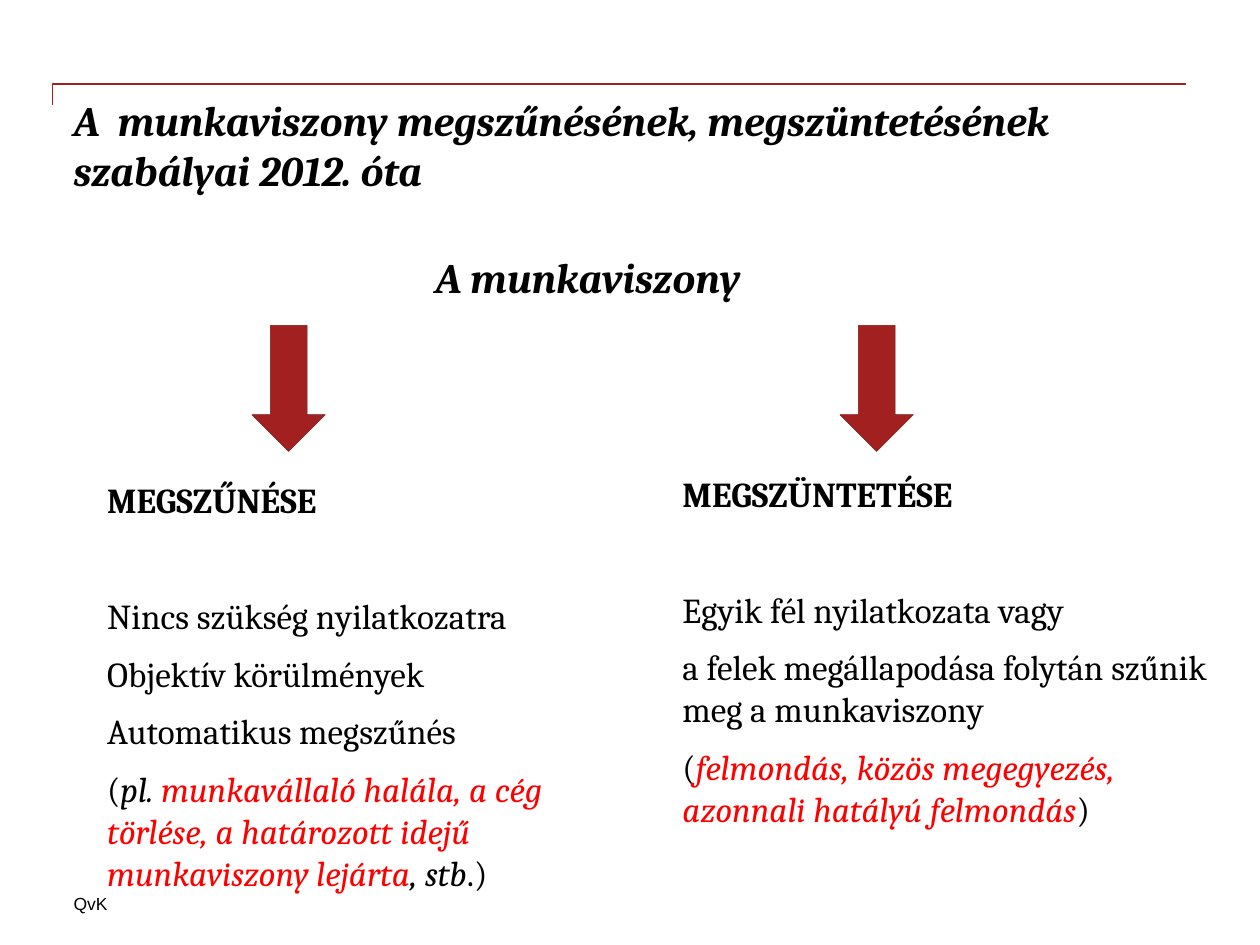
from dataclasses import dataclass

from pptx import Presentation
from pptx.dml.color import RGBColor
from pptx.enum.shapes import MSO_SHAPE as Shape
from pptx.enum.text import MSO_ANCHOR as Anchor, MSO_AUTO_SIZE as AutoSize, PP_ALIGN as Align
from pptx.oxml.ns import qn
from pptx.util import Inches, Pt

# Grid: 120 columns by 90 rows, one cell is a twelfth of an inch
COLUMNS, ROWS = 120, 90
CELL = Inches(10) // COLUMNS


@dataclass(frozen=True)
class Theme:
    accent: RGBColor = RGBColor(0xA3, 0x20, 0x20)
    outline: RGBColor = RGBColor(0x79, 0x18, 0x18)
    ink: RGBColor = RGBColor(0, 0, 0)
    example: RGBColor = RGBColor(0xFF, 0, 0)
    serif: str = "Cambria"
    sans: str = "Arial"
    title: int = 24
    body: int = 20
    footer: int = 10
    gap: int = 9
    head_gap: int = 42


@dataclass(frozen=True)
class Area:
    column: int
    row: int
    width: int
    height: int

    def emu(self) -> tuple:
        return tuple(n * CELL for n in (self.column, self.row, self.width, self.height))


@dataclass(frozen=True)
class Span:
    text: str
    bold: bool = False
    italic: bool = False
    color: RGBColor = Theme.ink


@dataclass(frozen=True)
class Branch:
    area: Area
    arrow: Area
    inset: tuple
    heading: str
    lines: tuple


THEME = Theme()

BRANCHES = (
    Branch(Area(9, 45, 52, 42), Area(24, 31, 7, 12), (0.1, 0.05), "MEGSZŰNÉSE", (
        (Span("Nincs szükség nyilatkozatra"),),
        (Span("Objektív körülmények"),),
        (Span("Automatikus megszűnés"),),
        (Span("("), Span("pl. ", italic=True),
         Span("munkavállaló halála, a cég törlése, a határozott idejű munkaviszony lejárta",
              italic=True, color=THEME.example),
         Span(", stb", italic=True), Span(".)")),
    )),
    Branch(Area(65, 45, 50, 30), Area(80, 31, 7, 12), (0, 0), "MEGSZÜNTETÉSE", (
        (Span("Egyik fél nyilatkozata vagy"),),
        (Span("a felek megállapodása folytán szűnik meg a munkaviszony"),),
        (Span("("), Span("felmondás, közös megegyezés, azonnali hatályú felmondás",
                         italic=True, color=THEME.example), Span(")")),
    )),
)


def place(box, area: Area) -> None:
    box.left, box.top, box.width, box.height = area.emu()


def write(box, paragraphs, *, size: int, font: str = THEME.serif, align=Align.LEFT,
          inset: tuple = (0, 0), gaps: tuple = (0,)) -> None:
    """Fill a box with paragraphs of spans; the last gap serves all later paragraphs."""
    frame = box.text_frame
    frame.word_wrap = True
    frame.auto_size = AutoSize.NONE
    frame.vertical_anchor = Anchor.TOP
    frame.margin_left = frame.margin_right = Inches(inset[0])
    frame.margin_top = frame.margin_bottom = Inches(inset[1])
    for index, spans in enumerate(paragraphs):
        para = frame.add_paragraph() if index else frame.paragraphs[0]
        para.alignment = align
        para.line_spacing = 1.0
        para.space_before = Pt(0)
        para.space_after = Pt(gaps[min(index, len(gaps) - 1)])
        properties = para._p.get_or_add_pPr()
        properties.set("marL", "0")
        properties.set("indent", "0")
        properties.append(properties.makeelement(qn("a:buNone"), {}))
        for span in spans:
            run = para.add_run()
            run.text = span.text
            run.font.name, run.font.size = font, Pt(size)
            run.font.bold, run.font.italic = span.bold, span.italic
            run.font.color.rgb = span.color


def draw_arrow(page, area: Area) -> None:
    arrow = page.shapes.add_shape(Shape.DOWN_ARROW, *area.emu())
    arrow.shadow.inherit = False
    arrow.fill.solid()
    arrow.fill.fore_color.rgb = THEME.accent
    arrow.line.color.rgb = THEME.outline
    arrow.line.width = Pt(0.25)


def draw_rule(page, points) -> None:
    start, *rest = [(column * CELL, row * CELL) for column, row in points]
    builder = page.shapes.build_freeform(*start)
    builder.add_line_segments(rest, close=False)
    rule = builder.convert_to_shape()
    rule.shadow.inherit = False
    rule.fill.background()
    rule.line.color.rgb = THEME.accent
    rule.line.width = Pt(1)


def main() -> None:
    deck = Presentation()
    deck.slide_width, deck.slide_height = COLUMNS * CELL, ROWS * CELL
    page = deck.slides.add_slide(deck.slide_layouts.get_by_name("Two Content"))
    title, *bodies = page.placeholders

    # Corner rule and footer
    draw_rule(page, ((5, 10), (5, 8), (113, 8)))
    footer = page.shapes.add_textbox(*Area(7, 85, 34, 2).emu())
    write(footer, [[Span("QvK")]], size=THEME.footer, font=THEME.sans)

    # Title and the shared subject of both branches
    place(title, Area(7, 9, 106, 12))
    write(title, [[Span("A  munkaviszony megszűnésének, megszüntetésének szabályai 2012. óta",
                        bold=True, italic=True)]], size=THEME.title)
    subject = page.shapes.add_textbox(*Area(3, 24, 106, 7).emu())
    write(subject, [[Span("A munkaviszony", bold=True, italic=True)]],
          size=THEME.title, align=Align.CENTER)

    # Two branches, each with an arrow above its text
    for branch, body in zip(BRANCHES, bodies):
        draw_arrow(page, branch.arrow)
        place(body, branch.area)
        write(body, [[Span(branch.heading, bold=True)], *branch.lines], size=THEME.body,
              inset=branch.inset, gaps=(THEME.head_gap, THEME.gap))

    deck.save("out.pptx")


if __name__ == "__main__":
    main()
